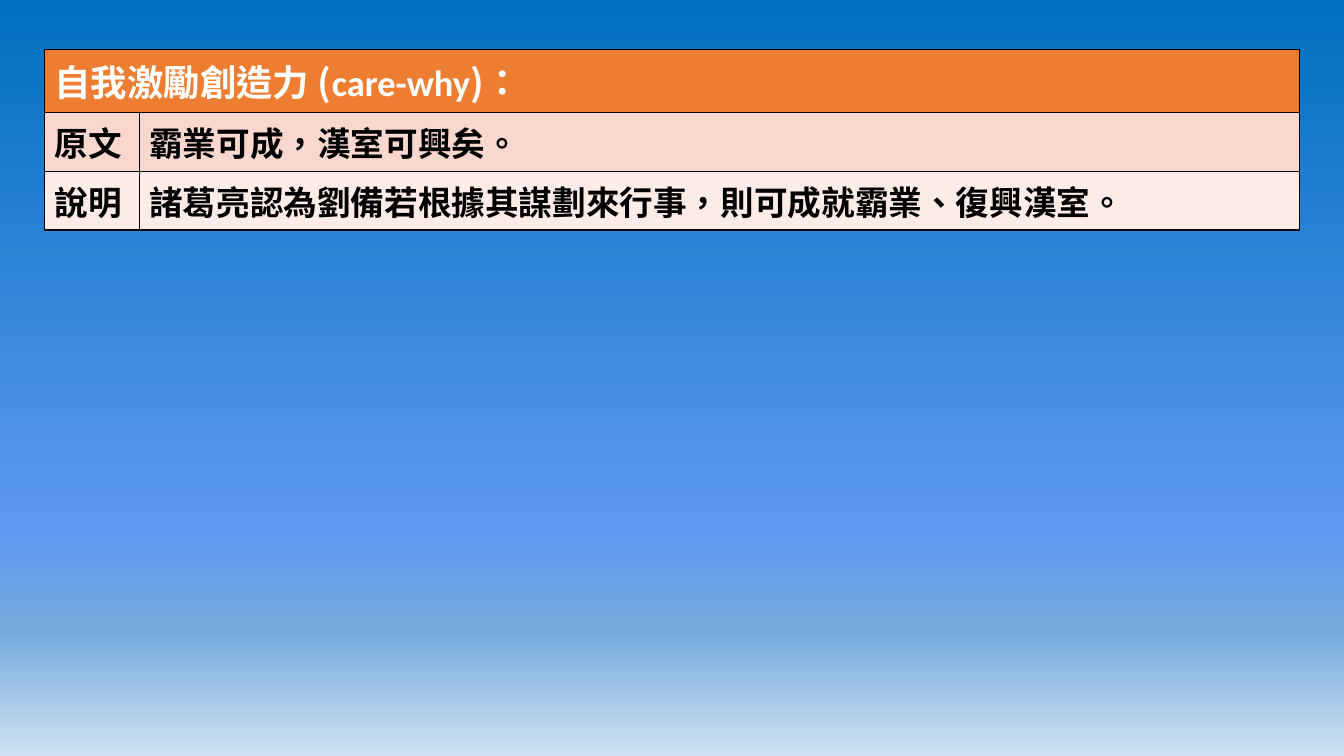
"""Build a slide with a three-row table on a blue gradient background."""
from lxml import etree
from pptx import Presentation
from pptx import util as u
from pptx.dml.color import RGBColor
from pptx.enum import text
from pptx.oxml import parse_xml
from pptx.oxml.ns import nsdecls, qn

SC, TC, LATIN = "Noto Sans CJK SC", "Noto Sans CJK TC", "Calibri"
HEADING = [("自我激勵創造力 (", SC), ("care-why", LATIN), (")：", SC)]
ROWS = [
    ([("原文", SC)], [("霸業可成，漢室可興矣。", SC)]),
    ([("說明", SC)], [("諸葛亮認為劉備若根據其謀劃來行事", SC), ("，", TC),
                    ("則可成就霸業、復興漢室。", SC)]),
]

WHITE, BLACK = RGBColor(0xFF, 0xFF, 0xFF), RGBColor(0, 0, 0)
ORANGE = RGBColor(0xED, 0x7D, 0x31)
BANDS = [RGBColor(0xF8, 0xD7, 0xCE), RGBColor(0xFC, 0xEC, 0xE8)]
SKY = [(0, RGBColor(0x00, 0x70, 0xC0)), (70, RGBColor(0x5D, 0x99, 0xF1)),
       (83, RGBColor(0x73, 0xA9, 0xDB)), (100, RGBColor(0xCE, 0xE1, 0xF2))]

LEFT, TOP = 0.44, 0.49
COLUMN_WIDTHS = [0.94, 11.51]
ROW_HEIGHTS = [0.62, 0.58, 0.58]


def paint_background(slide, stops):
    """Fill the slide background with a vertical gradient."""
    slide.background.fill.solid()
    solid = next(slide.element.iter(qn("a:solidFill")))
    stop_xml = "".join(f'<a:gs pos="{share * 1000}"><a:srgbClr val="{color}"/></a:gs>'
                       for share, color in stops)
    gradient = parse_xml(f'<a:gradFill {nsdecls("a")} rotWithShape="1"><a:gsLst>{stop_xml}'
                         '</a:gsLst><a:lin ang="5400000" scaled="0"/></a:gradFill>')
    solid.getparent().replace(solid, gradient)


def outline_cell(cell, color, width):
    """Draw a line on all four sides of a cell."""
    properties = cell._tc.get_or_add_tcPr()
    for index, side in enumerate(("lnL", "lnR", "lnT", "lnB")):
        properties.insert(index, parse_xml(
            f'<a:{side} {nsdecls("a")} w="{u.Pt(width)}"><a:solidFill>'
            f'<a:srgbClr val="{color}"/></a:solidFill></a:{side}>'))


def write_cell(cell, runs, *, size, color, fill):
    """Put formatted bold runs in a filled cell."""
    cell.fill.solid()
    cell.fill.fore_color.rgb = fill
    cell.vertical_anchor = text.MSO_ANCHOR.TOP
    paragraph = cell.text_frame.paragraphs[0]
    for words, typeface in runs:
        run = paragraph.add_run()
        run.text = words
        run.font.size = u.Pt(size)
        run.font.bold = True
        run.font.color.rgb = color
        run.font.name = typeface
        properties = run.font._element
        properties.set("lang", "en-US" if typeface == LATIN else "zh-TW")
        etree.SubElement(properties, qn("a:ea")).set("typeface", typeface)


def main():
    """Create and save the presentation."""
    presentation = Presentation()
    presentation.slide_width, presentation.slide_height = u.Inches(13.33), u.Inches(7.5)
    slide = presentation.slides.add_slide(presentation.slide_layouts[6])
    paint_background(slide, SKY)

    frame = slide.shapes.add_table(
        len(ROW_HEIGHTS), len(COLUMN_WIDTHS), u.Inches(LEFT), u.Inches(TOP),
        u.Inches(sum(COLUMN_WIDTHS)), u.Inches(sum(ROW_HEIGHTS)))
    table = frame.table
    for column, width in zip(table.columns, COLUMN_WIDTHS):
        column.width = u.Inches(width)
    for row, height in zip(table.rows, ROW_HEIGHTS):
        row.height = u.Inches(height)

    table.cell(0, 0).merge(table.cell(0, 1))
    write_cell(table.cell(0, 0), HEADING, size=26, color=WHITE, fill=ORANGE)
    for row_index, (row, band) in enumerate(zip(ROWS, BANDS), start=1):
        for column_index, runs in enumerate(row):
            write_cell(table.cell(row_index, column_index), runs,
                       size=24, color=BLACK, fill=band)
    for cell in table.iter_cells():
        outline_cell(cell, BLACK, 1)

    presentation.save("out.pptx")


if __name__ == "__main__":
    main()
